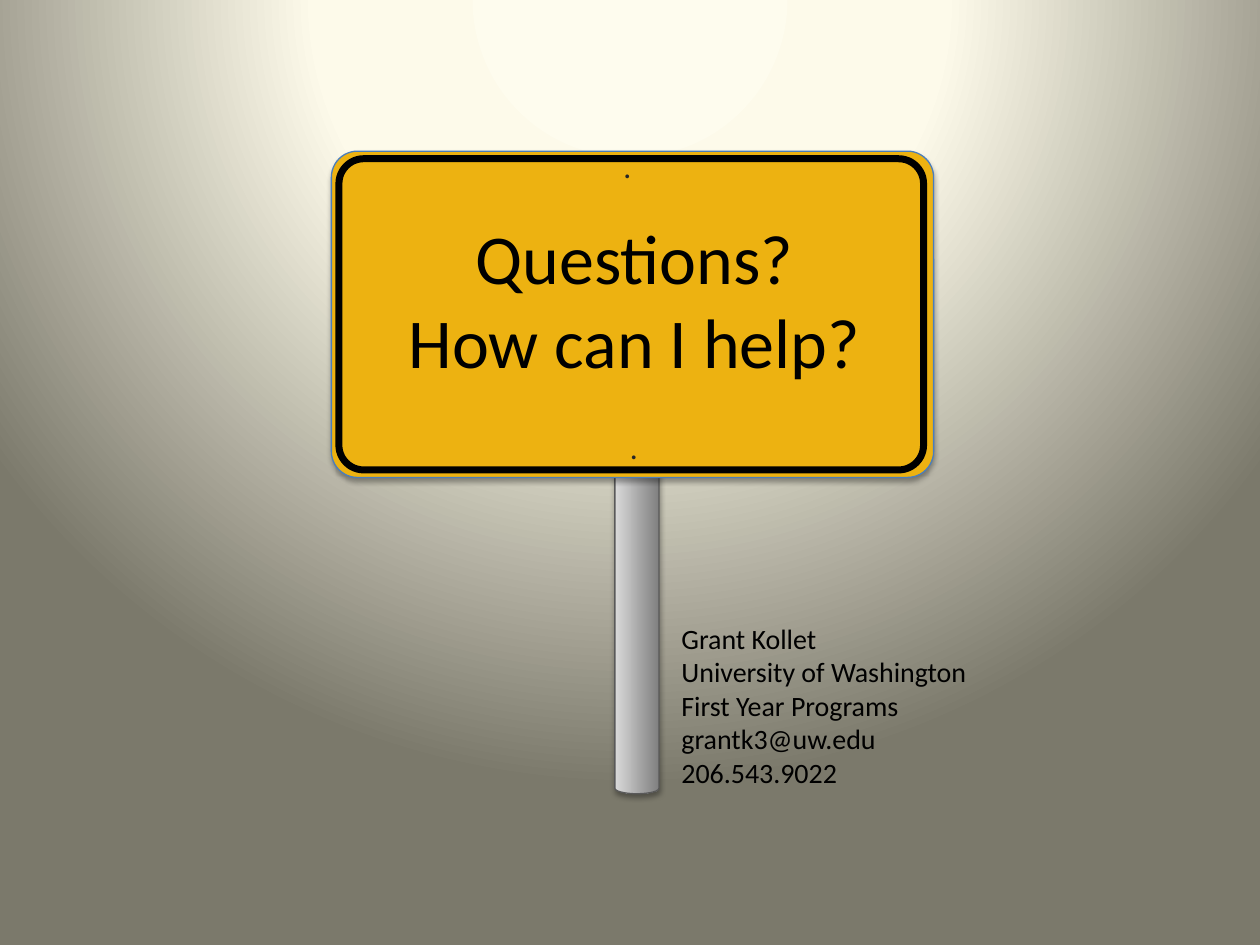
from typing import NamedTuple

from pptx import Presentation
from pptx.dml.color import RGBColor
from pptx.enum.shapes import MSO_SHAPE as Kind
from pptx.enum.text import MSO_ANCHOR as Anchor, MSO_AUTO_SIZE as Fit, PP_ALIGN as Align
from pptx.oxml import parse_xml
from pptx.oxml.ns import nsdecls, qn
from pptx.util import Inches, Pt

WIDE, HIGH = Inches(10), Inches(7.5)
BLACK = RGBColor(0x00, 0x00, 0x00)
INK = RGBColor(0x26, 0x26, 0x26)
YELLOW = RGBColor(0xED, 0xB2, 0x11)
BLUE = RGBColor(0x4B, 0x7E, 0xBC)
EDGE = RGBColor(0x59, 0x59, 0x59)
LIGHT = RGBColor(0xD9, 0xD9, 0xD9)
DARK = RGBColor(0x80, 0x80, 0x80)
GLOW = [(0, RGBColor(0xFE, 0xFC, 0xEE)), (40, RGBColor(0xFD, 0xFA, 0xEA)),
        (100, RGBColor(0x7B, 0x79, 0x6B))]


class Box(NamedTuple):
    """Left, top, width and height in percent of the slide."""
    x: float
    y: float
    w: float
    h: float

    def place(self) -> tuple[int, ...]:
        sides = (WIDE, HIGH, WIDE, HIGH)
        return tuple(round(side * part / 100) for side, part in zip(sides, self))


class Panel(NamedTuple):
    box: Box
    kind: Kind
    fill: tuple[RGBColor, ...]
    line: RGBColor
    width: float
    shade: int | None = None
    round: float | None = None


class Label(NamedTuple):
    box: Box
    lines: tuple[str, ...]
    size: int
    color: RGBColor = BLACK
    align: Align = Align.LEFT
    wrap: bool = True


POST = Panel(Box(48.8, 44.13, 3.5, 39.87), Kind.CAN, (LIGHT, DARK), EDGE, 0.75, 80)
SIGN = [
    Panel(Box(26.3, 16, 47.8, 34.53), Kind.ROUNDED_RECTANGLE, (YELLOW,), BLUE, 0.75, 90, 0.08),
    Panel(Box(26.9, 16.8, 46.4, 32.93), Kind.ROUNDED_RECTANGLE, (), BLACK, 4, None, 0.08),
]
TITLE = Label(Box(28.4, 22, 43.9, 19.33), ("Questions?", "How can I help?"), 40,
              align=Align.CENTER)
NOTES = [
    Label(Box(48.5, 14.93, 2.7, 5.33), (".",), 18, INK, wrap=False),
    Label(Box(49, 44.67, 2.7, 5.33), (".",), 18, INK, wrap=False),
    Label(Box(53.1, 65.07, 29.8, 19.73),
          ("Grant Kollet", "University of Washington", "First Year Programs",
           "grantk3@uw.edu", "206.543.9022"), 16),
]


def style(item, **values) -> None:
    for name, value in values.items():
        setattr(item, name, value)


def glow(slide) -> None:
    """Fill the background with a round gradient centred above the slide."""
    slide.background.fill.gradient()
    grad = slide._element.find(".//" + qn("a:gradFill"))
    stops = "".join(f'<a:gs pos="{pos * 1000}"><a:srgbClr val="{color}"/></a:gs>'
                    for pos, color in GLOW)
    grad.getparent().replace(grad, parse_xml(
        f'<a:gradFill {nsdecls("a")} rotWithShape="1"><a:gsLst>{stops}</a:gsLst>'
        '<a:path path="circle"><a:fillToRect l="50000" t="-80000" r="50000" b="180000"/>'
        '</a:path></a:gradFill>'))


def shade(shape, angle: int) -> None:
    effects = shape._element.spPr.find(qn("a:effectLst"))
    effects.append(parse_xml(
        f'<a:outerShdw {nsdecls("a")} blurRad="{Pt(3.1)}" dist="{Pt(1.8)}" '
        f'dir="{angle * 60000}" rotWithShape="0"><a:srgbClr val="{BLACK}">'
        '<a:alpha val="35000"/></a:srgbClr></a:outerShdw>'))


def panel(shapes, part: Panel) -> None:
    shape = shapes.add_shape(part.kind, *part.box.place())
    shape.shadow.inherit = False
    if part.round is not None:
        shape.adjustments[0] = part.round
    # No colour is hollow, one is solid, two make a gradient
    if not part.fill:
        shape.fill.background()
    elif len(part.fill) == 1:
        shape.fill.solid()
        shape.fill.fore_color.rgb = part.fill[0]
    else:
        shape.fill.gradient()
        shape.fill.gradient_angle = 0
        for stop, color in zip(shape.fill.gradient_stops, part.fill):
            stop.color.rgb = color
    shape.line.color.rgb = part.line
    shape.line.width = Pt(part.width)
    if part.shade is not None:
        shade(shape, part.shade)


def write(shape, label: Label) -> None:
    frame = shape.text_frame
    frame.text = "\n".join(label.lines)
    style(frame, word_wrap=label.wrap, auto_size=Fit.SHAPE_TO_FIT_TEXT,
          vertical_anchor=Anchor.TOP)
    for para in frame.paragraphs:
        para.alignment = label.align
        style(para.runs[0].font, name="Calibri", size=Pt(label.size))
        para.runs[0].font.color.rgb = label.color


def main() -> None:
    deck = Presentation()
    style(deck, slide_width=WIDE, slide_height=HIGH)
    slide = deck.slides.add_slide(deck.slide_layouts[5])
    shapes = slide.shapes
    glow(slide)

    # Post and sign
    panel(shapes, POST)
    sign = shapes.add_group_shape()
    for part in SIGN:
        panel(sign.shapes, part)

    # Title, brought in front of the sign
    title = shapes.title
    style(title, **dict(zip(("left", "top", "width", "height"), TITLE.box.place())))
    write(title, TITLE)
    sign._element.addnext(title._element)

    # Bolts and contact details
    for label in NOTES:
        write(shapes.add_textbox(*label.box.place()), label)

    deck.save("out.pptx")


if __name__ == "__main__":
    main()
